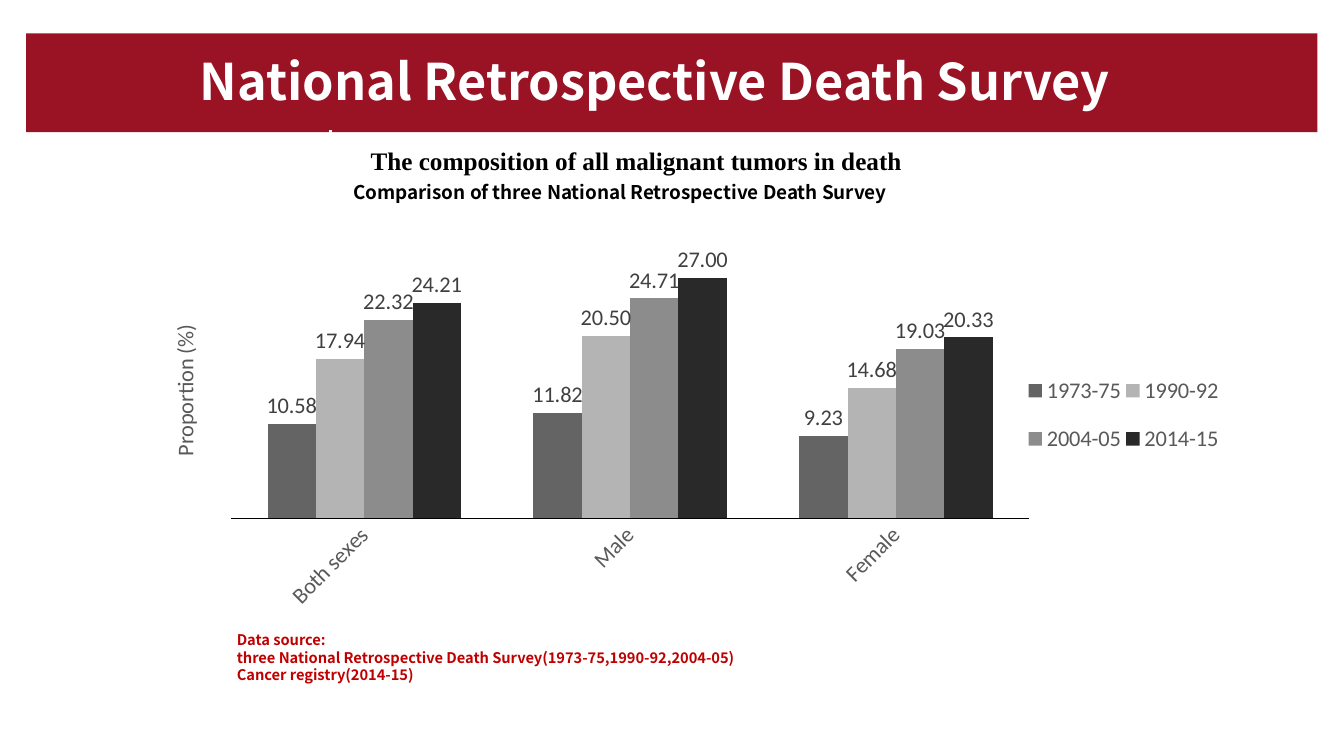
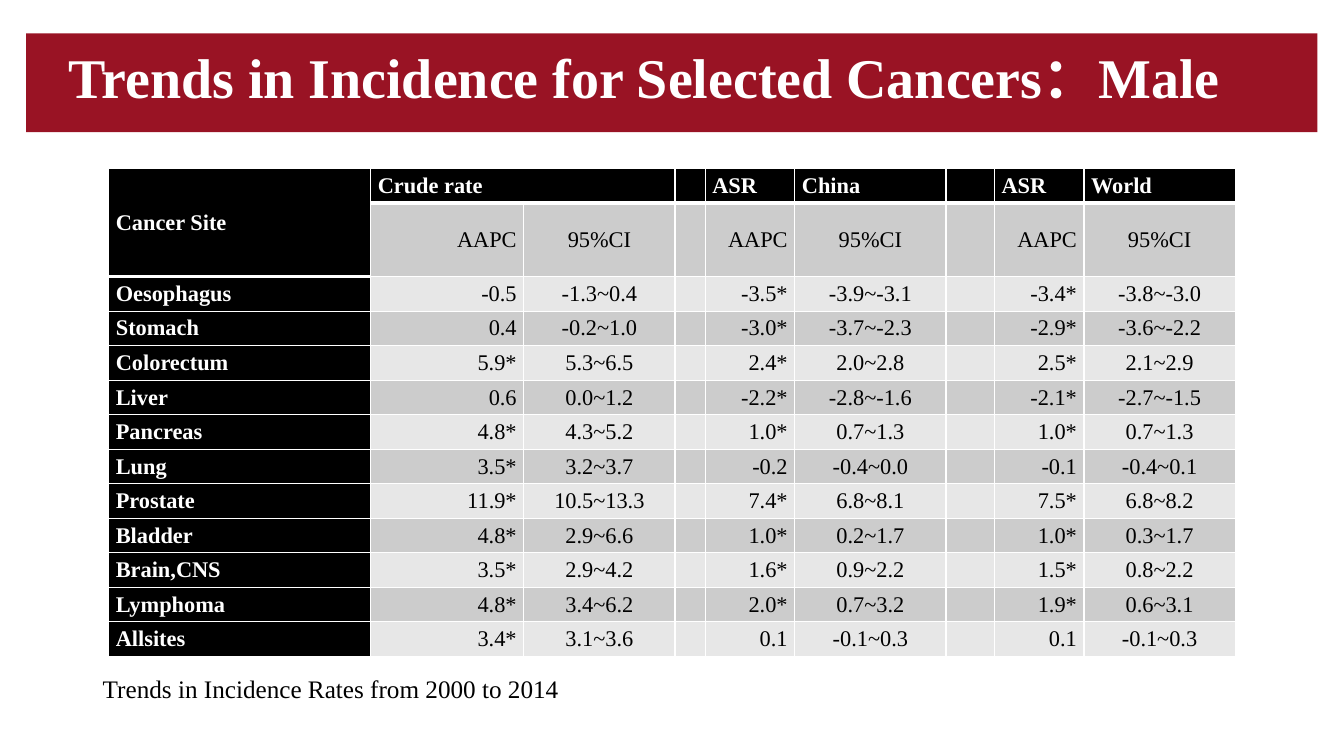
from lxml import etree
from pptx import Presentation
from pptx.chart.data import CategoryChartData
from pptx.dml.color import RGBColor
from pptx.enum import chart as ce, shapes, text
from pptx.oxml import parse_xml
from pptx.oxml.ns import nsdecls, qn
from pptx.util import Cm, Pt

RED, DARK, WHITE, BLACK = "991324", "C00000", "FFFFFF", "000000"
GREY, LABEL = "595959", "404040"
STRIPES = "E7E7E7", "CCCCCC"
SANS, SERIF, PLAIN = "Noto Sans CJK SC", "Times New Roman", "Calibri"
BAND = 0.66, 0.84, 32.54, 2.49

SEXES = "Both sexes", "Male", "Female"
SURVEYS = [
    ("1973-75", "646464", (10.58, 11.82, 9.23)),
    ("1990-92", "B4B4B4", (17.94, 20.5, 14.68)),
    ("2004-05", "8C8C8C", (22.32, 24.71, 19.03)),
    ("2014-15", "292929", (24.21, 27, 20.33)),
]
SOURCE = [
    "Data source:",
    "three National Retrospective Death Survey(1973-75,1990-92,2004-05)",
    "Cancer registry(2014-15)",
]
HEAD = ["Cancer Site", "Crude rate", "", "", "ASR", "China", "", "ASR", "World"]
PAIR = ["AAPC", "95%CI"]
TRENDS = [
    ("Oesophagus", "-0.5", "-1.3~0.4", "-3.5*", "-3.9~-3.1", "-3.4*", "-3.8~-3.0"),
    ("Stomach", "0.4", "-0.2~1.0", "-3.0*", "-3.7~-2.3", "-2.9*", "-3.6~-2.2"),
    ("Colorectum", "5.9*", "5.3~6.5", "2.4*", "2.0~2.8", "2.5*", "2.1~2.9"),
    ("Liver", "0.6", "0.0~1.2", "-2.2*", "-2.8~-1.6", "-2.1*", "-2.7~-1.5"),
    ("Pancreas", "4.8*", "4.3~5.2", "1.0*", "0.7~1.3", "1.0*", "0.7~1.3"),
    ("Lung", "3.5*", "3.2~3.7", "-0.2", "-0.4~0.0", "-0.1", "-0.4~0.1"),
    ("Prostate", "11.9*", "10.5~13.3", "7.4*", "6.8~8.1", "7.5*", "6.8~8.2"),
    ("Bladder", "4.8*", "2.9~6.6", "1.0*", "0.2~1.7", "1.0*", "0.3~1.7"),
    ("Brain,CNS", "3.5*", "2.9~4.2", "1.6*", "0.9~2.2", "1.5*", "0.8~2.2"),
    ("Lymphoma", "4.8*", "3.4~6.2", "2.0*", "0.7~3.2", "1.9*", "0.6~3.1"),
    ("Allsites", "3.4*", "3.1~3.6", "0.1", "-0.1~0.3", "0.1", "-0.1~0.3"),
]
WIDTHS = 6.6, 3.86, 3.81, 0.76, 2.26, 3.81, 1.22, 2.26, 3.81
ROW, TALL = 0.87, 1.86


def rgb(code):
    return RGBColor.from_string(code)


def cm(box):
    return [Cm(n) for n in box]


def style(font, size, name, color, bold=False):
    font.size, font.name, font.bold = Pt(size), name, bold
    font.color.rgb = rgb(color)


def write(frame, lines, *look, lead=None):
    frame.text = "\n".join(lines)
    for para in frame.paragraphs:
        if lead:
            para.line_spacing = lead
        style(para.font, *look)


def add_text(slide, box, lines, *look, lead=None):
    frame = slide.shapes.add_textbox(*cm(box)).text_frame
    frame.word_wrap = True
    write(frame, lines, *look, lead=lead)


def add_band(slide):
    """Put the red band on the layout, behind every title."""
    band = slide.shapes.add_shape(shapes.MSO_SHAPE.RECTANGLE, *cm(BAND))
    band.shadow.inherit = False
    band.fill.solid()
    band.fill.fore_color.rgb = rgb(RED)
    band.line.fill.background()
    slide.slide_layout.shapes.element.insert(2, band.element)


def add_title(slide, box, words, size, name, lead=None):
    title = slide.shapes.title
    title.left, title.top, title.width, title.height = cm(box)
    frame = title.text_frame
    write(frame, [words], size, name, WHITE, True, lead=lead)
    frame.paragraphs[0].alignment = text.PP_ALIGN.LEFT
    frame.vertical_anchor = text.MSO_ANCHOR.MIDDLE
    frame.auto_size = text.MSO_AUTO_SIZE.NONE


def layout_xml(x, y, w=None, h=None, inner=False):
    parts = [("layoutTarget", "inner")] if inner else []
    parts += [("xMode", "edge"), ("yMode", "edge"), ("x", x), ("y", y)]
    if w:
        parts += [("w", w), ("h", h)]
    body = "".join(f'<c:{tag} val="{val}"/>' for tag, val in parts)
    return parse_xml(f'<c:layout {nsdecls("c")}><c:manualLayout>{body}'
                     '</c:manualLayout></c:layout>')


def place(parent, after, layout):
    """Replace the layout of a chart part, right after the named child."""
    for old in parent.findall(qn("c:layout")):
        parent.remove(old)
    if after is None:
        parent.insert(0, layout)
    else:
        parent.find(qn(after)).addnext(layout)


def add_bars(slide, box):
    data = CategoryChartData(number_format="0.00")
    data.categories = SEXES
    for name, _, values in SURVEYS:
        data.add_series(name, values)
    chart = slide.shapes.add_chart(
        ce.XL_CHART_TYPE.COLUMN_CLUSTERED, *cm(box), data).chart
    style(chart.font, 16, PLAIN, BLACK)
    chart.has_title = False
    plot = chart.plots[0]
    plot.gap_width, plot.overlap, plot.vary_by_categories = 150, 0, False
    for bars, (_, color, _) in zip(plot.series, SURVEYS):
        bars.format.fill.solid()
        bars.format.fill.fore_color.rgb = rgb(color)
    plot.has_data_labels = True
    labels = plot.data_labels
    labels.show_value = True
    labels.number_format, labels.number_format_is_linked = "0.00", False
    labels.position = ce.XL_LABEL_POSITION.OUTSIDE_END
    style(labels.font, 16, PLAIN, LABEL)

    sexes, scale = chart.category_axis, chart.value_axis
    sexes.major_tick_mark = ce.XL_TICK_MARK.NONE
    sexes.format.line.color.rgb = rgb(BLACK)
    sexes.format.line.width = Pt(0.75)
    style(sexes.tick_labels.font, 16, PLAIN, GREY)
    turn = sexes._element.find(qn("c:txPr")).find(qn("a:bodyPr"))
    turn.set("rot", "-2700000")
    turn.set("vert", "horz")
    scale.minimum_scale, scale.maximum_scale = 0, 30
    scale.has_major_gridlines = False
    scale.visible = False
    name = scale.axis_title
    write(name.text_frame, ["Proportion (%)"], 16, PLAIN, GREY)
    body = name._element.find(".//" + qn("a:bodyPr"))
    body.set("rot", "-5400000")
    body.set("vert", "horz")
    place(name._element, "c:tx", layout_xml(0.05, 0.22))

    chart.has_legend = True
    legend = chart.legend
    legend.position = ce.XL_LEGEND_POSITION.RIGHT
    legend.include_in_layout = False
    style(legend.font, 16, PLAIN, GREY)
    place(legend._element, "c:legendPos", layout_xml(0.82, 0.31, 0.18, 0.3))
    area = chart._chartSpace.find(".//" + qn("c:plotArea"))
    place(area, None, layout_xml(0.109, 0.042, 0.716, 0.682, inner=True))


def rule_cell(cell, base):
    """Draw white cell borders; base is the width of the lower one."""
    props = cell._tc.get_or_add_tcPr()
    for at, (side, width) in enumerate(zip("LRTB", (1, 1, 1, base))):
        props.insert(at, parse_xml(
            f'<a:ln{side} {nsdecls("a")} w="{Pt(width)}"><a:solidFill>'
            f'<a:srgbClr val="{WHITE}"/></a:solidFill></a:ln{side}>'))


def add_trends(slide, left, top):
    rows = [HEAD, ["", *PAIR, "", *PAIR, "", *PAIR]]
    rows += [[*r[:3], "", *r[3:5], "", *r[5:]] for r in TRENDS]
    highs = [ROW, TALL] + [ROW] * len(TRENDS)
    box = left, top, sum(WIDTHS), sum(highs)
    table = slide.shapes.add_table(len(rows), len(HEAD), *cm(box)).table
    for col, width in zip(table.columns, WIDTHS):
        col.width = Cm(width)
    for i, (row, high) in enumerate(zip(rows, highs)):
        table.rows[i].height = Cm(high)
        for j, words in enumerate(row):
            cell = table.cell(i, j)
            dark = i == 0 or j == 0
            cell.fill.solid()
            cell.fill.fore_color.rgb = rgb(BLACK if dark else STRIPES[i % 2])
            cell.margin_left = cell.margin_right = Cm(0.18)
            cell.margin_top = cell.margin_bottom = 0
            cell.vertical_anchor = text.MSO_ANCHOR.MIDDLE
            write(cell.text_frame, [words], 16, SERIF,
                  WHITE if dark else BLACK, dark)
            if not dark:
                cell.text_frame.paragraphs[0].alignment = (
                    text.PP_ALIGN.RIGHT if words == "AAPC" or j in (1, 4, 7)
                    else text.PP_ALIGN.CENTER)
            rule_cell(cell, 3 if i == 0 or (i, j) == (1, 0) else 1)
    table.cell(0, 0).merge(table.cell(1, 0))
    table.cell(0, 1).merge(table.cell(0, 2))


def add_tick(slide, x, top, end):
    tick = slide.shapes.add_connector(
        shapes.MSO_CONNECTOR.STRAIGHT, *cm((x, top, x, end)))
    tick.line.color.rgb = rgb(WHITE)
    tick.line.width = 0
    etree.SubElement(tick._element.spPr, qn("a:effectLst"))


def main():
    deck = Presentation()
    deck.slide_width, deck.slide_height = Cm(33.87), Cm(19.05)
    survey, trend = [deck.slides.add_slide(deck.slide_layouts[5])
                     for _ in range(2)]
    add_band(survey)

    add_tick(survey, 8.33, 3.28, 3.53)
    add_title(survey, (4.78, 1.3, 24.33, 1.47),
              "National Retrospective Death Survey", 36, SANS)
    add_text(survey, (9.09, 3.53, 16.2, 1.02),
             ["The composition of all malignant tumors in death"],
             18, SERIF, BLACK, True)
    add_text(survey, (8.66, 4.42, 14.86, 0.84),
             ["Comparison of three National Retrospective Death Survey"],
             13.5, SANS, BLACK, True)
    add_bars(survey, (2.77, 5.92, 28.07, 9.86))
    add_text(survey, (5.72, 15.77, 16.2, 1.6), SOURCE, 10.5, SANS, DARK, True)

    add_title(trend, (1.47, 0.84, 31.95, 2.36),
              "Trends in Incidence for Selected Cancers：Male", 40, SERIF, 0.9)
    add_trends(trend, 2.74, 4.24)
    add_text(trend, (2.34, 16.84, 15.39, 1.02),
             ["Trends in Incidence Rates from 2000 to 2014"], 18, SERIF, BLACK)
    deck.save("out.pptx")


if __name__ == "__main__":
    main()
